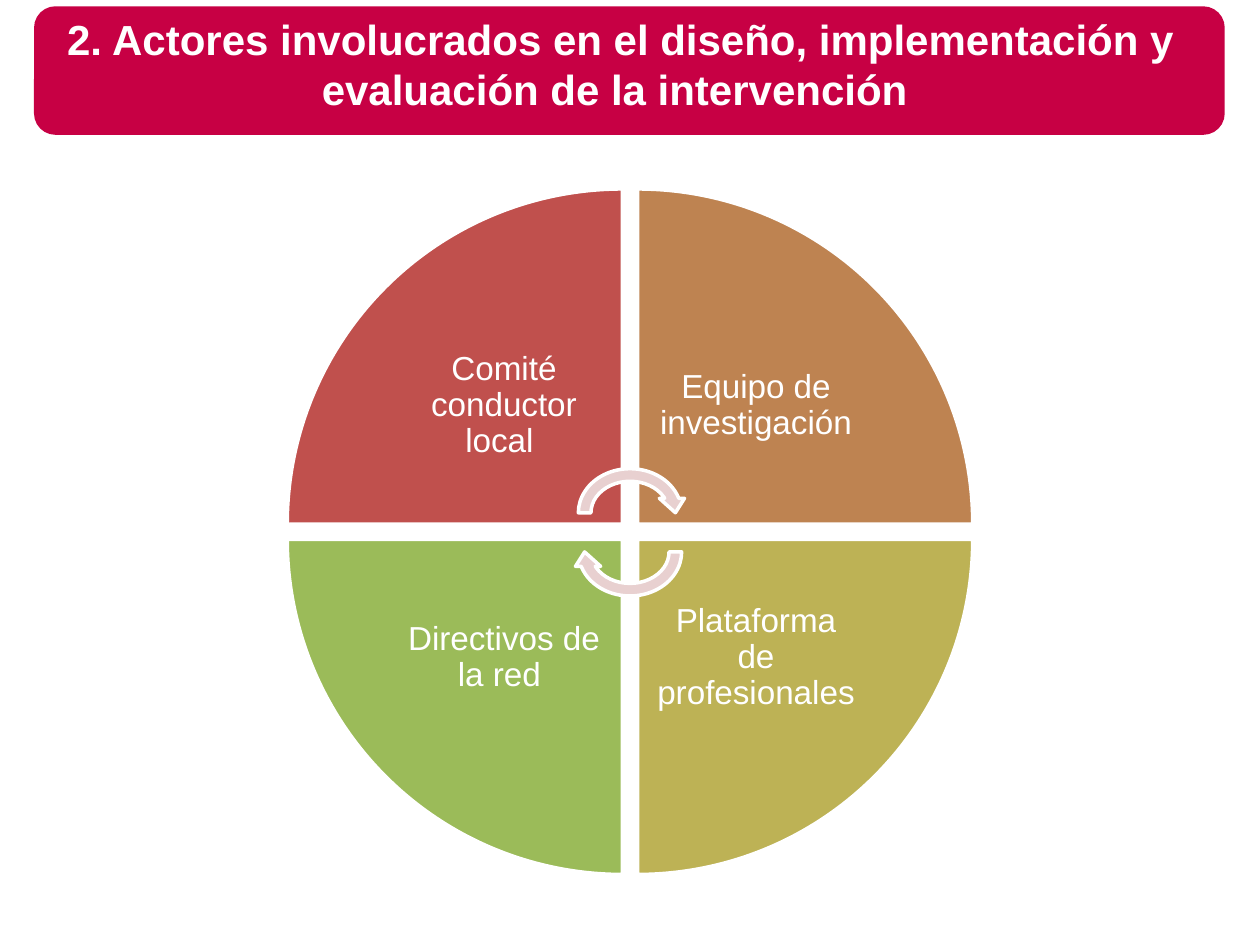
from dataclasses import dataclass

from pptx import Presentation
from pptx.dml.color import RGBColor
from pptx.enum.shapes import MSO_SHAPE as Shape
from pptx.enum.text import MSO_ANCHOR as Anchor, PP_ALIGN as Align
from pptx.util import Inches, Pt


@dataclass(frozen=True)
class Theme:
    font: str = "Arial"
    title_size: int = 24
    label_size: int = 19
    line_width: int = 2
    white: str = "FFFFFF"
    banner: str = "C70044"
    arrow: str = "E8D0D0"


THEME = Theme()

# Clockwise from the top left: label, fill, column, row
ACTORS = [
    ("Comité conductor local ", "C0504D", 0, 0),
    ("Equipo de investigación", "BE8351", 1, 0),
    ("Plataforma de profesionales ", "BDB255", 1, 1),
    ("Directivos de la red ", "9BBB59", 0, 1),
]


def rgb(color):
    return RGBColor.from_string(color)


def add_filled(s, kind, box, fill, line=None, rotation=0):
    sp = s.shapes.add_shape(kind, *map(Inches, box))
    sp.shadow.inherit = False
    sp.rotation = rotation
    sp.fill.solid()
    sp.fill.fore_color.rgb = rgb(fill)
    if line:
        sp.line.color.rgb = rgb(line)
        sp.line.width = Pt(THEME.line_width)
    else:
        sp.line.fill.background()
    return sp


def add_text(s, box, text, size, bold=False, inset=None):
    """Add a centred white text box and return its paragraph."""
    tf = s.shapes.add_textbox(*map(Inches, box)).text_frame
    tf.word_wrap = True
    tf.vertical_anchor = Anchor.MIDDLE
    if inset is not None:
        tf.margin_left = tf.margin_right = Inches(inset)
        tf.margin_top = tf.margin_bottom = Inches(inset)
    p = tf.paragraphs[0]
    p.alignment = Align.CENTER
    r = p.add_run()
    r.text = text
    r.font.name = THEME.font
    r.font.size = Pt(size)
    r.font.bold = bold
    r.font.color.rgb = rgb(THEME.white)
    return p


def add_banner(s, left, top, width, height):
    add_filled(s, Shape.ROUNDED_RECTANGLE, (left, top, width, height), THEME.banner)
    add_text(
        s, (left + 0.01, top + 0.02, width - 0.16, height - 0.15),
        "2. Actores involucrados en el diseño, implementación y "
        "evaluación de la intervención ",
        THEME.title_size, bold=True)


def add_actor_wheel(s, left, top, size):
    """Four wedges with labels near the centre, and two arrows around it."""
    gap, label = 0.12, 1.88
    wedge = (size - gap) / 2
    step = wedge + gap
    for i, (text, fill, col, row) in enumerate(ACTORS):
        x, y = left + col * step, top + row * step
        add_filled(s, Shape.PIE_WEDGE, (x, y, wedge, wedge), fill,
                   THEME.white, rotation=90 * i)
        inward = wedge - label
        p = add_text(
            s, (x + (1 - col) * inward, y + (1 - row) * inward, label, label),
            text, THEME.label_size, inset=0.15)
        p.line_spacing = 0.9

    arrow_w, arrow_h, arrow_step = 0.92, 0.8, 0.31
    x = left + (size - arrow_w) / 2
    y = top + 2.17
    for i in range(2):
        add_filled(s, Shape.CIRCULAR_ARROW,
                   (x, y + i * arrow_step, arrow_w, arrow_h),
                   THEME.arrow, THEME.white, rotation=180 * i)


def main():
    prs = Presentation()
    prs.slide_width, prs.slide_height = Inches(10), Inches(7.5)
    s = prs.slides.add_slide(prs.slide_layouts[6])
    add_banner(s, 0.27, 0.05, 9.45, 1.02)
    add_actor_wheel(s, 2.28, 1.5, 5.44)
    prs.save("out.pptx")


if __name__ == "__main__":
    main()
